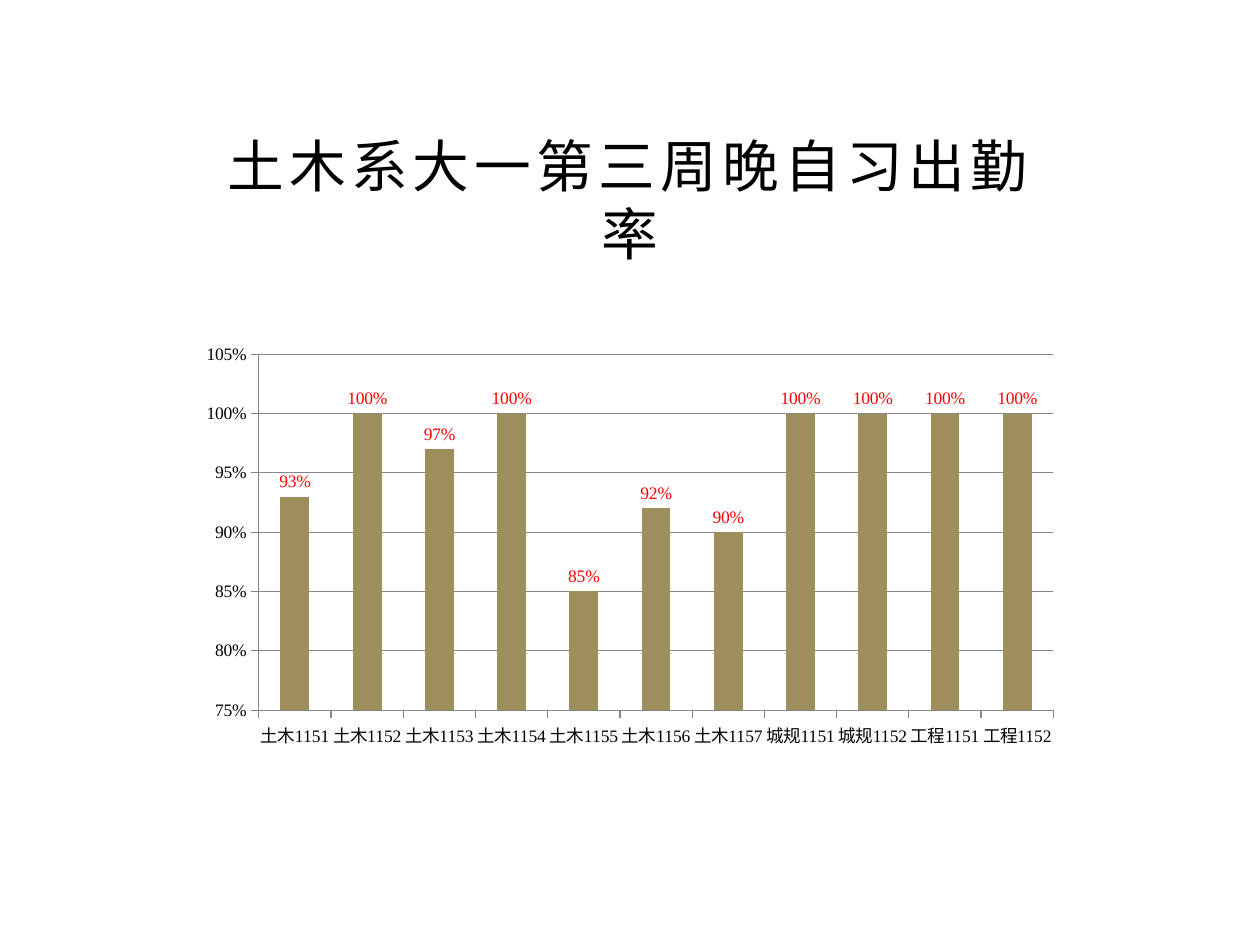
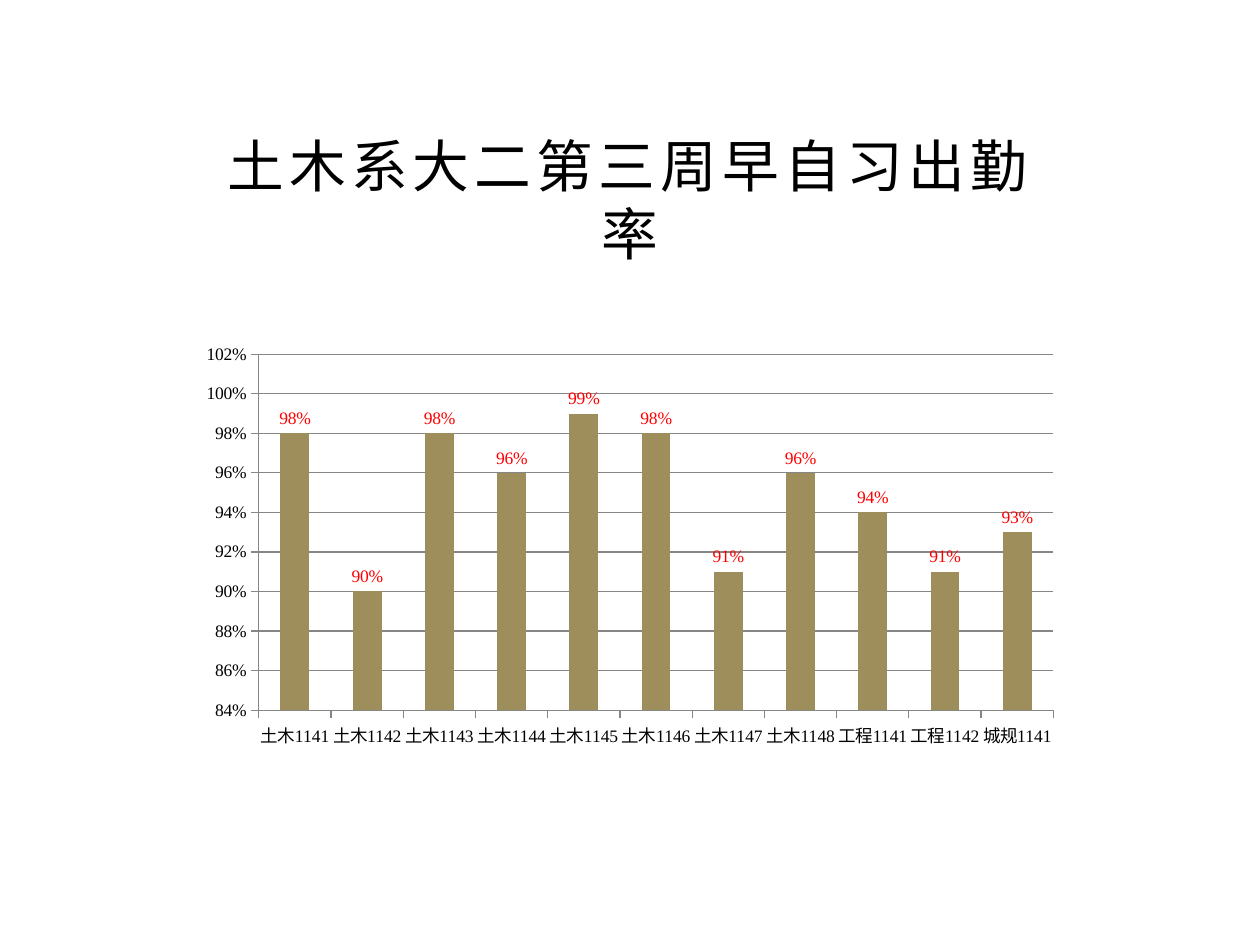
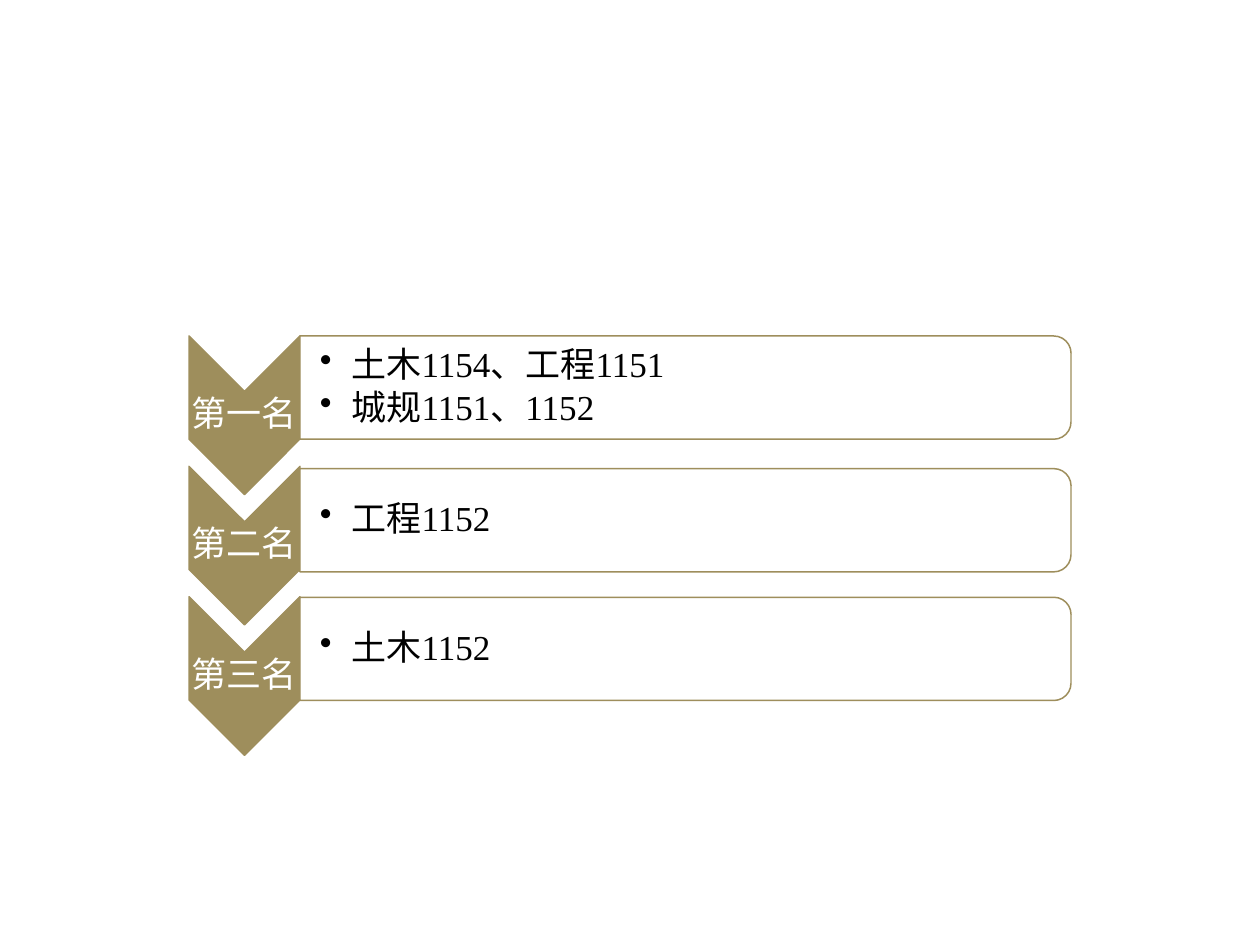
from lxml.etree import SubElement
from pptx import Presentation
from pptx.chart.data import CategoryChartData
from pptx.dml.color import RGBColor
from pptx.enum.chart import XL_CHART_TYPE, XL_LABEL_POSITION, XL_TICK_MARK
from pptx.enum.shapes import MSO_SHAPE
from pptx.enum.text import MSO_ANCHOR, MSO_AUTO_SIZE, PP_ALIGN
from pptx.oxml.ns import qn
from pptx.util import Pt

COLORS = {"bar": "9E8E5C", "value": "FF0000", "text": "000000",
          "grid": "868686", "paper": "FFFFFF"}
TITLE_FONT, BODY_FONT = "Arial", "Times New Roman"
LEFT, CONTENT_TOP, CONTENT_WIDTH = 108, 192, 504

CHEVRON_WIDTH, CHEVRON_HEIGHT, CHEVRON_STEP = 63.4, 90.6, 74.5
BAND_LEFT = LEFT + CHEVRON_WIDTH
BAND_WIDTH, BAND_HEIGHT = 440.6, 59

FRESHMAN_EVENING = [
    ("土木1151", 0.93), ("土木1152", 1), ("土木1153", 0.97), ("土木1154", 1),
    ("土木1155", 0.85), ("土木1156", 0.92), ("土木1157", 0.9), ("城规1151", 1),
    ("城规1152", 1), ("工程1151", 1), ("工程1152", 1)]
SOPHOMORE_MORNING = [
    ("土木1141", 0.98), ("土木1142", 0.9), ("土木1143", 0.98), ("土木1144", 0.96),
    ("土木1145", 0.99), ("土木1146", 0.98), ("土木1147", 0.91), ("土木1148", 0.96),
    ("工程1141", 0.94), ("工程1142", 0.91), ("城规1141", 0.93)]
# rank, winning classes, top of the band
RANKING = [
    ("第一名", ["土木1154、工程1151", "城规1151、1152"], 192),
    ("第二名", ["工程1152"], 267.8),
    ("第三名", ["土木1152"], 341.3)]


def color(name):
    return RGBColor.from_string(COLORS[name])


def set_font(font, face, size, color_name):
    font.name, font.size = face, Pt(size)
    font.color.rgb = color(color_name)


def set_line(line, color_name, width):
    line.color.rgb = color(color_name)
    line.width = Pt(width)


def add_title(slide, wording):
    title = slide.shapes.title
    title.left, title.top = Pt(LEFT), Pt(102)
    title.width, title.height = Pt(CONTENT_WIDTH), Pt(54)
    frame = title.text_frame
    frame.text = wording
    frame.auto_size = MSO_AUTO_SIZE.NONE
    frame.vertical_anchor = MSO_ANCHOR.BOTTOM
    heading = frame.paragraphs[0]
    heading.alignment = PP_ALIGN.CENTER
    set_font(heading.font, TITLE_FONT, 32.4, "text")
    heading.runs[0]._r.get_or_add_rPr().set("spc", "300")


def add_attendance_chart(slide, attendance, low, high, step):
    data = CategoryChartData(number_format="0%")
    classes, rates = zip(*attendance)
    data.categories = classes
    data.add_series("Series 1", rates)
    chart = slide.shapes.add_chart(
        XL_CHART_TYPE.COLUMN_CLUSTERED, Pt(LEFT), Pt(CONTENT_TOP),
        Pt(CONTENT_WIDTH), Pt(240), data).chart
    chart.has_title = chart.has_legend = False
    set_font(chart.font, BODY_FONT, 10, "text")

    rate_axis = chart.value_axis
    rate_axis.minimum_scale, rate_axis.maximum_scale = low, high
    rate_axis.major_unit = step
    rate_axis.tick_labels.number_format = "0%"
    rate_axis.tick_labels.number_format_is_linked = False
    rate_axis.has_major_gridlines = True
    set_line(rate_axis.major_gridlines.format.line, "grid", 0.75)
    for axis in (rate_axis, chart.category_axis):
        axis.major_tick_mark = XL_TICK_MARK.OUTSIDE
        set_line(axis.format.line, "grid", 0.75)

    plot = chart.plots[0]
    plot.gap_width = 150
    plot.vary_by_categories = False
    bars = plot.series[0].format.fill
    bars.solid()
    bars.fore_color.rgb = color("bar")
    plot.has_data_labels = True
    labels = plot.data_labels
    labels.show_value = True
    labels.number_format, labels.number_format_is_linked = "0%", False
    labels.position = XL_LABEL_POSITION.OUTSIDE_END
    set_font(labels.font, BODY_FONT, 10, "value")


def add_turned_shape(slide, preset, left, top, width, height, fill):
    """Fill the given box with a preset shape turned clockwise by 90 degrees."""
    shift = (width - height) / 2
    shape = slide.shapes.add_shape(
        preset, Pt(left + shift), Pt(top - shift), Pt(height), Pt(width))
    shape.rotation = 90
    shape.shadow.inherit = False
    shape.fill.solid()
    shape.fill.fore_color.rgb = color(fill)
    set_line(shape.line, "bar", 0.85)
    return shape


def add_text(slide, left, top, width, height, lines, color_name, inset=0.7):
    frame = slide.shapes.add_textbox(
        Pt(left), Pt(top), Pt(width), Pt(height)).text_frame
    frame.word_wrap = True
    frame.vertical_anchor = MSO_ANCHOR.MIDDLE
    frame.margin_left = Pt(inset)
    frame.margin_top = frame.margin_right = frame.margin_bottom = Pt(0.7)
    frame.text = "\n".join(lines)
    for paragraph in frame.paragraphs:
        paragraph.line_spacing = 0.9
        set_font(paragraph.font, BODY_FONT, 20, color_name)
    return frame.paragraphs


def add_bullet(paragraph):
    paragraph.level = 1
    paragraph.space_after = Pt(3)
    properties = paragraph._p.get_or_add_pPr()
    properties.set("marL", str(Pt(18)))
    properties.set("indent", str(-Pt(18)))
    bullet = properties.makeelement(qn("a:buChar"), {"char": "•"})
    properties.find(qn("a:defRPr")).addprevious(bullet)


def add_rank(slide, rank, classes, chevron_top, band_top):
    add_turned_shape(slide, MSO_SHAPE.CHEVRON, LEFT, chevron_top,
                     CHEVRON_WIDTH, CHEVRON_HEIGHT, "bar")
    label = add_text(slide, LEFT, chevron_top + 31.7, CHEVRON_WIDTH, 27.2,
                     [rank], "paper")
    label[0].alignment = PP_ALIGN.CENTER

    band = add_turned_shape(slide, MSO_SHAPE.ROUND_2_SAME_RECTANGLE, BAND_LEFT,
                            band_top, BAND_WIDTH, BAND_HEIGHT, "paper")
    band_color = band._element.spPr.find(qn("a:solidFill"))[0]
    SubElement(band_color, qn("a:alpha"), val="90000")
    for winner in add_text(slide, BAND_LEFT, band_top + 2.9, BAND_WIDTH - 2.9,
                           BAND_HEIGHT - 5.8, classes, "text", inset=11.4):
        add_bullet(winner)


def main():
    deck = Presentation()
    deck.slide_width, deck.slide_height = Pt(720), Pt(540)
    title_only, blank = deck.slide_layouts[5], deck.slide_layouts[6]

    for wording, attendance, low, high, step in (
            ("土木系大一第三周晚自习出勤率", FRESHMAN_EVENING, 0.75, 1.05, 0.05),
            ("土木系大二第三周早自习出勤率", SOPHOMORE_MORNING, 0.84, 1.02, 0.02)):
        slide = deck.slides.add_slide(title_only)
        add_title(slide, wording)
        add_attendance_chart(slide, attendance, low, high, step)

    podium = deck.slides.add_slide(blank)
    for place, (rank, classes, band_top) in enumerate(RANKING):
        add_rank(podium, rank, classes, CONTENT_TOP + place * CHEVRON_STEP, band_top)

    deck.save("out.pptx")


if __name__ == "__main__":
    main()
